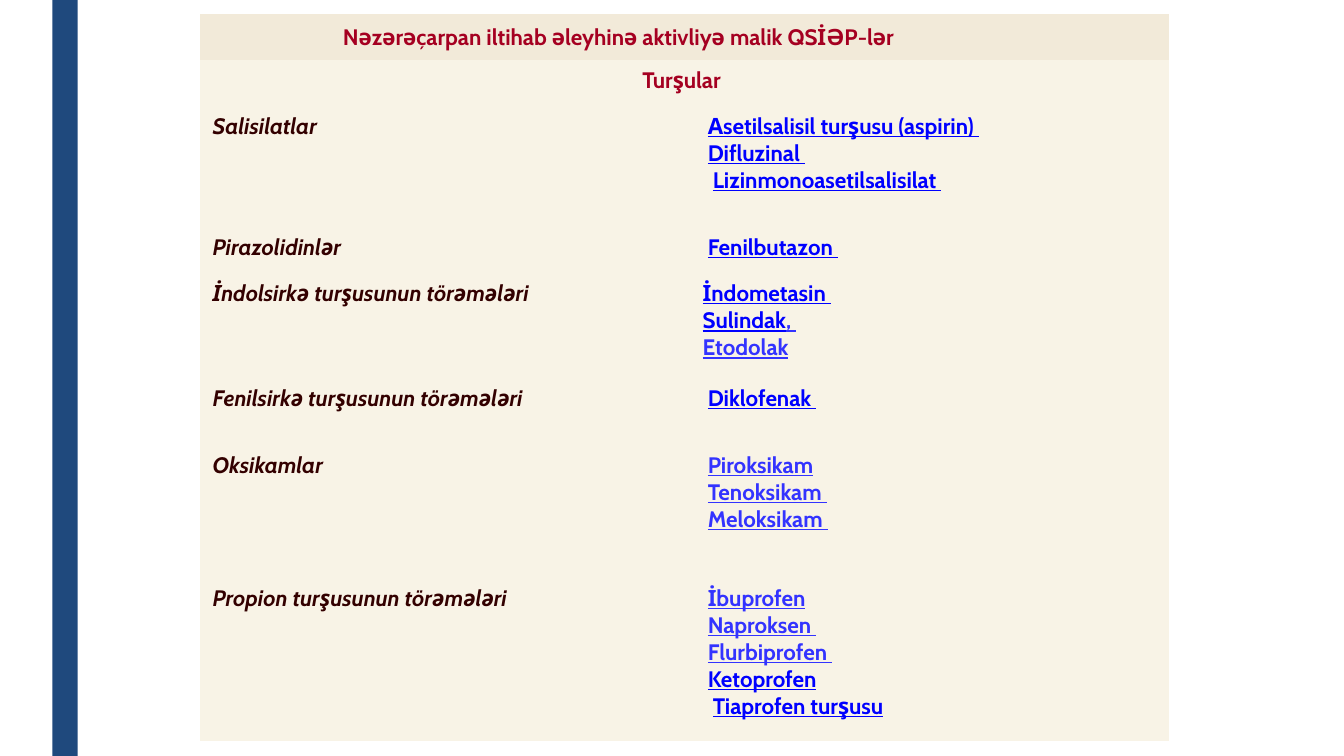
from lxml import etree
from pptx import Presentation
from pptx import util as u
from pptx.dml.color import RGBColor
from pptx.enum import shapes, text
from pptx.oxml import ns

FONT = "Cabin"
HEX = {"bar": "1F497D", "head": "F2EAD9", "body": "F8F3E6", "red": "A50021",
       "brown": "330000", "blue": "0000FF", "pale": "3333FF"}
PLAIN = "{2D5ABB26-0587-4C30-8999-92F81FD0307C}"  # no style, no grid
COLS = [4.71, 4.9]
HEAD = "Nəzərəçarpan iltihab əleyhinə aktivliyə malik QSİƏP-lər"

# Group, row height, drugs; a drug is its indent and its (text, colour) parts
GROUPS = [
    ("Salisilatlar", 1.2, [
        (0.2, [("Аsetilsalisil turşusu (aspirin) ", "blue")]),
        (0.2, [("Difluzinal ", "blue")]),
        (0.25, [("Lizinmonoasetilsalisilat ", "blue")])]),
    ("Pirazolidinlər", 0.46, [(0.2, [("Fenilbutazon ", "blue")])]),
    ("İndolsirkə turşusunun törəmələri", 1.04, [
        (0.15, [("İndometasin ", "blue")]),
        (0.15, [("Sulindak", "blue"), (", ", "pale")]),
        (0.15, [("Etodolak", "pale")])]),
    ("Fenilsirkə turşusunun törəmələri", 0.66, [(0.2, [("Diklofenak ", "blue")])]),
    ("Oksikamlar", 1.32, [
        (0.2, [("Piroksikam", "pale")]),
        (0.2, [("Tenoksikam ", "pale")]),
        (0.2, [("Meloksikam ", "pale")])]),
    ("Propion turşusunun törəmələri", 1.61, [
        (0.2, [("İbuprofen", "pale")]),
        (0.2, [("Naproksen ", "pale")]),
        (0.2, [("Flurbiprofen ", "pale")]),
        (0.2, [("Ketoprofen", "blue")]),
        (0.25, [("Tiaprofen turşusu", "blue")])]),
]


def color(name):
    return RGBColor.from_string(HEX[name])


def write(par, words, tint, italic=False, under=False):
    run = par.add_run()
    run.text = words
    font = run.font
    font.name, font.size, font.bold = FONT, u.Pt(16), True
    font.italic, font.underline = italic, under
    font.color.rgb = color(tint)


def add_bar(slide):
    bar = slide.shapes.add_shape(shapes.MSO_SHAPE.RECTANGLE, u.Inches(0.52), 0,
                                 u.Inches(0.25), u.Inches(7.5))
    bar.shadow.inherit = False
    bar.fill.solid()
    bar.fill.fore_color.rgb = color("bar")
    bar.line.fill.background()


def add_grid(slide, highs):
    frame = slide.shapes.add_table(len(highs), len(COLS), u.Inches(1.98), u.Inches(0.14),
                                   u.Inches(sum(COLS)), u.Inches(sum(highs)))
    table = frame.table
    table._tbl.tblPr.find(ns.qn("a:tableStyleId")).text = PLAIN
    for col, wide in zip(table.columns, COLS):
        col.width = u.Inches(wide)
    for num, (row, high) in enumerate(zip(table.rows, highs)):
        row.height = u.Inches(high)
        for cell in row.cells:
            cell.margin_left = cell.margin_right = u.Inches(0.13)
            cell.margin_top = cell.margin_bottom = u.Inches(0.06)
            cell.fill.solid()
            cell.fill.fore_color.rgb = color("body" if num else "head")
    return table


def set_tab(par, gap):
    tabs = etree.SubElement(par._p.get_or_add_pPr(), ns.qn("a:tabLst"))
    etree.SubElement(tabs, ns.qn("a:tab"), pos=str(u.Inches(gap)), algn="l")


def add_drugs(cell, drugs):
    frame = cell.text_frame
    for num, (gap, parts) in enumerate(drugs):
        par = frame.add_paragraph() if num else frame.paragraphs[0]
        set_tab(par, gap)
        # The underline starts at the cell edge, under the tab
        write(par, "\t", "pale", under=True)
        for words, tint in parts:
            write(par, words, tint, under=True)


def main():
    deck = Presentation()
    deck.slide_width, deck.slide_height = u.Inches(13.33), u.Inches(7.5)
    slide = deck.slides.add_slide(deck.slide_layouts[6])
    add_bar(slide)

    # Two merged heading rows
    table = add_grid(slide, [0.46, 0.46] + [high for _, high, _ in GROUPS])
    for num in range(2):
        table.cell(num, 0).merge(table.cell(num, 1))
    head, acid = table.cell(0, 0), table.cell(1, 0)
    head.vertical_anchor = text.MSO_ANCHOR.MIDDLE
    head.margin_left = u.Inches(1.42)
    write(head.text_frame.paragraphs[0], HEAD, "red")
    par = acid.text_frame.paragraphs[0]
    par.alignment = text.PP_ALIGN.CENTER
    write(par, "Turşular ", "red")

    # Groups and their drugs
    for num, (group, _, drugs) in enumerate(GROUPS, 2):
        write(table.cell(num, 0).text_frame.paragraphs[0], group, "brown", italic=True)
        add_drugs(table.cell(num, 1), drugs)

    deck.save("out.pptx")


if __name__ == "__main__":
    main()
